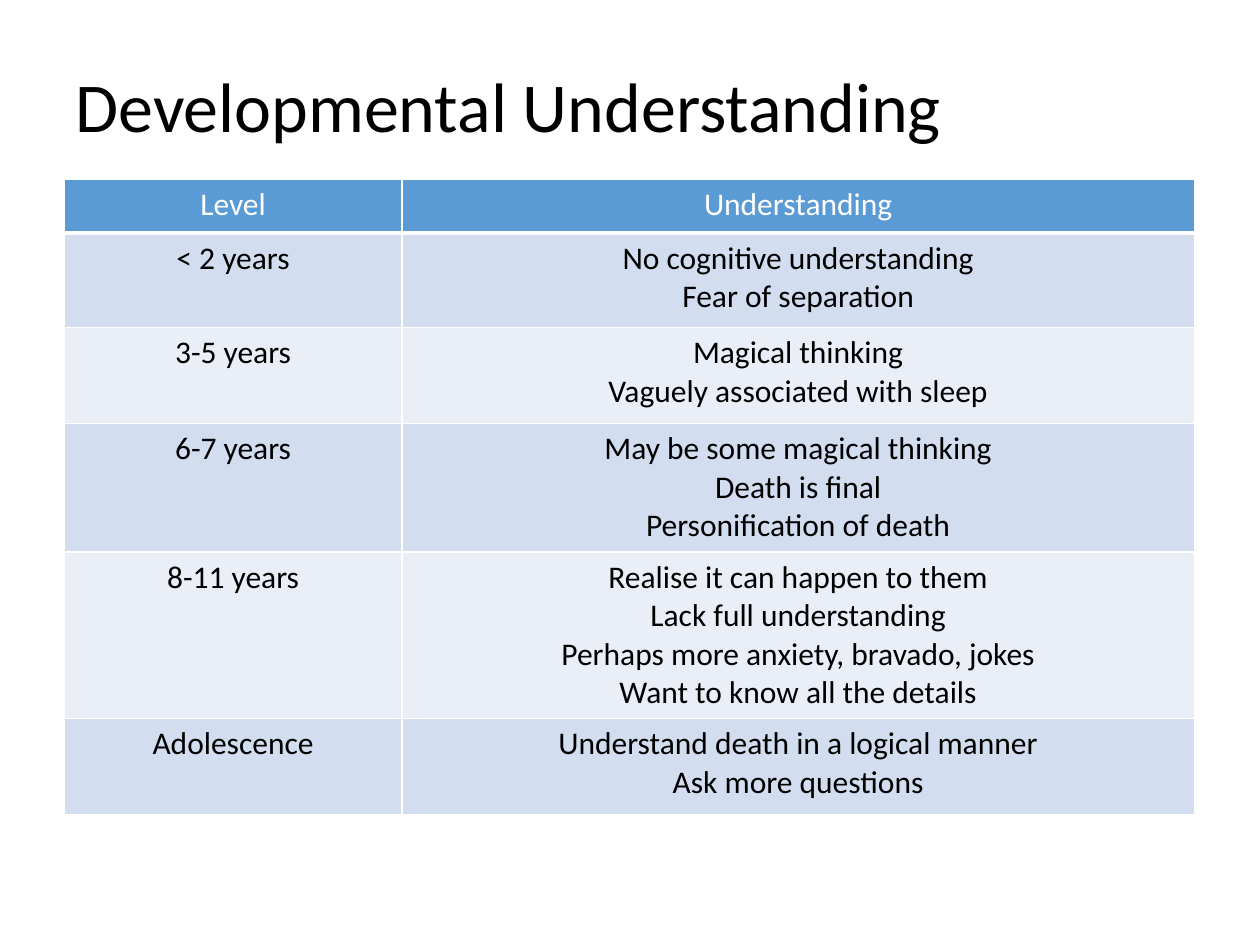
from lxml import etree
from pptx import Presentation
from pptx import util as u
from pptx.dml.color import RGBColor
from pptx.enum import text
from pptx.oxml.ns import qn

HEADINGS = ("Level", "Understanding")
STAGES = [
    ("< 2 years", ["No cognitive understanding", "Fear of separation"]),
    ("3-5 years", ["Magical thinking", "Vaguely associated with sleep"]),
    ("6-7 years", ["May be some magical thinking", "Death is final",
                   "Personification of death"]),
    ("8-11 years", ["Realise it can happen to them", "Lack full understanding",
                    "Perhaps more anxiety, bravado, jokes",
                    "Want to know all the details"]),
    ("Adolescence", ["Understand death in a logical manner",
                     "Ask more questions"]),
]
COLUMN_WIDTHS = (2.68, 6.29)
ROW_HEIGHTS = (0.43, 0.75, 0.76, 1.02, 1.32, 0.77)


def rgb(hex_colour):
    return RGBColor.from_string(hex_colour)


class Deck:
    font = "Calibri"
    ink, paper, header = "000000", "FFFFFF", "5B9BD5"
    bands = ("D2DEEF", "EAEFF7")
    title_size, body_size = 40, 18

    def __init__(self, width, height):
        self.prs = Presentation()
        self.prs.slide_width, self.prs.slide_height = u.Inches(width), u.Inches(height)
        self.slide = self.prs.slides.add_slide(self.prs.slide_layouts[5])

    def area(self, left, top, width, height):
        """Turn shares of the slide's size into lengths."""
        across, down = self.prs.slide_width, self.prs.slide_height
        return [u.Emu(round(share * side)) for share, side in
                zip((left, top, width, height), (across, down) * 2)]

    def add_words(self, paragraph, words, size, colour, align):
        paragraph.alignment = align
        run = paragraph.add_run()
        run.text = words
        run.font.name, run.font.size = self.font, u.Pt(size)
        run.font.color.rgb = rgb(colour)

    def title(self, words, *shares):
        heading = self.slide.shapes.title
        heading.left, heading.top, heading.width, heading.height = self.area(*shares)
        frame = heading.text_frame
        frame.word_wrap = True
        frame.vertical_anchor = text.MSO_ANCHOR.MIDDLE
        frame.paragraphs[0].line_spacing = 0.9
        self.add_words(frame.paragraphs[0], words, self.title_size, self.ink,
                       text.PP_ALIGN.LEFT)

    def borders(self, cell, bottom):
        properties = cell._tc.get_or_add_tcPr()
        sides = {"lnL": 1, "lnR": 1, "lnT": 1, "lnB": bottom}
        for place, (side, points) in enumerate(sides.items()):
            line = etree.Element(qn(f"a:{side}"), w=str(u.Pt(points)))
            fill = etree.SubElement(line, qn("a:solidFill"))
            etree.SubElement(fill, qn("a:srgbClr"), val=self.paper)
            properties.insert(place, line)

    def cell(self, cell, lines, fill, colour, bottom):
        cell.fill.solid()
        cell.fill.fore_color.rgb = rgb(fill)
        self.borders(cell, bottom)
        frame = cell.text_frame
        for number, words in enumerate(lines):
            paragraph = frame.add_paragraph() if number else frame.paragraphs[0]
            self.add_words(paragraph, words, self.body_size, colour,
                           text.PP_ALIGN.CENTER)

    def table(self, headings, records, widths, heights, *shares):
        grid = self.slide.shapes.add_table(
            len(heights), len(widths), *self.area(*shares)).table
        for column, width in zip(grid.columns, widths):
            column.width = u.Inches(width)
        for row, height in zip(grid.rows, heights):
            row.height = u.Inches(height)
        for column, heading in enumerate(headings):
            self.cell(grid.cell(0, column), [heading], self.header, self.paper, 3)
        for row, (level, insights) in enumerate(records, 1):
            band = self.bands[(row - 1) % 2]
            for column, lines in enumerate(([level], insights)):
                self.cell(grid.cell(row, column), lines, band, self.ink, 1)


def main():
    deck = Deck(10, 7.5)
    deck.title("Developmental Understanding", 0.05, 0.33 / 7.5, 0.9, 1.08 / 7.5)
    deck.table(HEADINGS, STAGES, COLUMN_WIDTHS, ROW_HEIGHTS,
               0.051, 1.42 / 7.5, sum(COLUMN_WIDTHS) / 10, sum(ROW_HEIGHTS) / 7.5)
    deck.prs.save("out.pptx")


if __name__ == "__main__":
    main()
